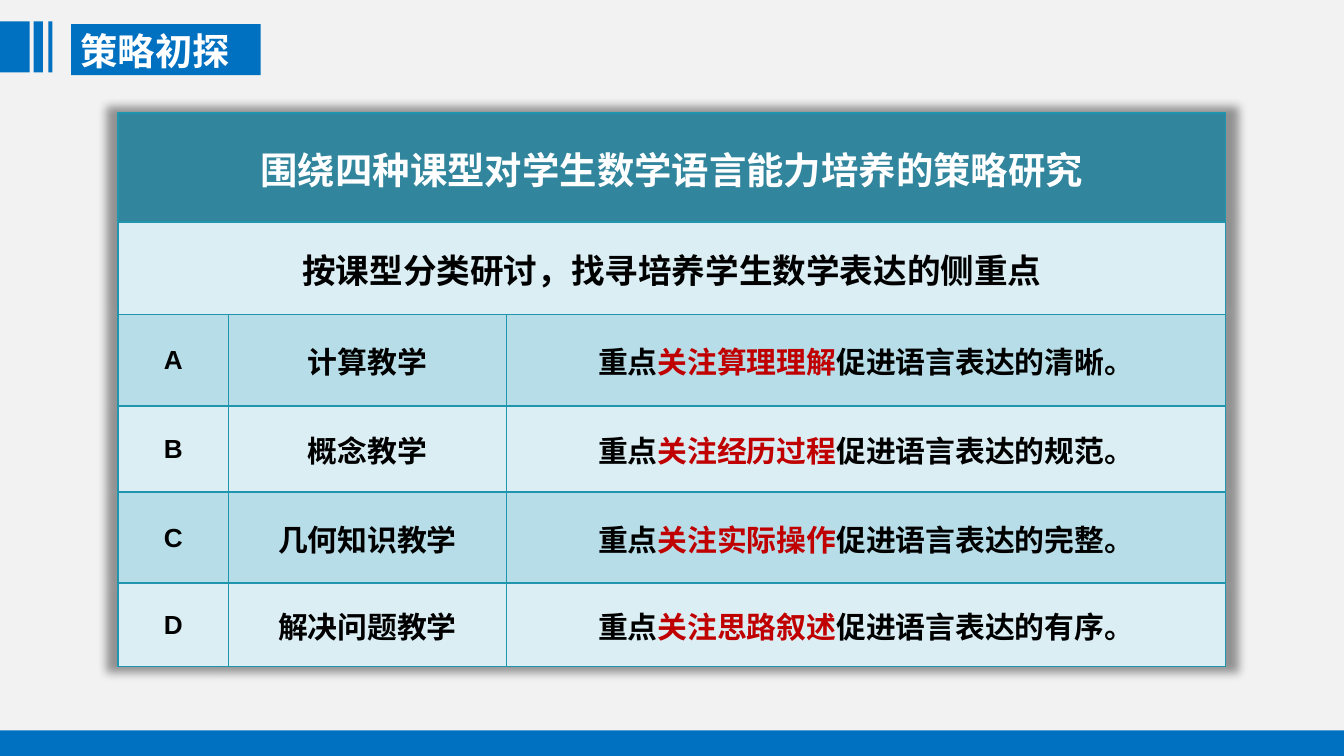
"""Build the slide of teaching strategies for four lesson types."""
from typing import NamedTuple

from lxml import etree
from pptx import Presentation, util as u
from pptx.dml.color import RGBColor
from pptx.enum import shapes, text
from pptx.oxml import ns

BLUE, RED, BLACK, WHITE = "0070C0", "C00000", "000000", "FFFFFF"
HEADER, LIGHT, MID, BORDER = "31859C", "DBEEF4", "B7DEE8", "2095AE"
CJK = "Noto Sans CJK SC"
WIDTH = 10
HEIGHT = WIDTH * 9 / 16
FOOTER = 0.19


class Bar(NamedTuple):
    left: float
    top: float
    width: float
    height: float


class Run(NamedTuple):
    text: str
    size: float
    color: str = BLACK
    font: str = "Arial"


class Lesson(NamedTuple):
    letter: str
    name: str
    focus: str
    result: str


STRIPES = [Bar(left, 0.16, width, 0.38) for left, width in ((0, 0.22), (0.25, 0.07), (0.36, 0.03))]
TITLES = [
    (Run("围绕四种课型对学生数学语言能力培养的策略研究", 20, WHITE), HEADER),
    (Run("按课型分类研讨，找寻培养学生数学表达的侧重点", 18), LIGHT),
]
LESSONS = [
    Lesson("A", "计算教学", "关注算理理解", "清晰"),
    Lesson("B", "概念教学", "关注经历过程", "规范"),
    Lesson("C", "几何知识教学", "关注实际操作", "完整"),
    Lesson("D", "解决问题教学", "关注思路叙述", "有序"),
]
COLS = (0.82, 2.07, 5.35)
ROWS = (0.81, 0.69, 0.68, 0.64, 0.68, 0.62)


def rgb(value: str) -> RGBColor:
    return RGBColor.from_string(value)


def add_xml(parent, tag: str, **attrs: str):
    return etree.SubElement(parent, ns.qn(tag), attrs)


def paint(fill, color: str) -> None:
    fill.solid()
    fill.fore_color.rgb = rgb(color)


def add_bar(s, bar: Bar) -> None:
    sp = s.shapes.add_shape(shapes.MSO_SHAPE.RECTANGLE, *map(u.Inches, bar))
    sp.shadow.inherit = False
    sp.line.fill.background()
    paint(sp.fill, BLUE)


def add_run(p, run: Run) -> None:
    r = p.add_run()
    r.text = run.text
    for key, value in {"size": u.Pt(run.size), "bold": True, "name": run.font}.items():
        setattr(r.font, key, value)
    r.font.color.rgb = rgb(run.color)
    add_xml(r.font._element, "a:ea", typeface=CJK)


def add_heading(s) -> None:
    add_bar(s, Bar(0.53, 0.18, 1.41, 0.38))
    tf = s.shapes.add_textbox(*map(u.Inches, (0.53, 0.17, 1.6, 0.41))).text_frame
    fmt = {"word_wrap": True, "margin_left": u.Inches(0.07), "margin_right": u.Inches(0.07),
           "margin_top": u.Inches(0.04), "margin_bottom": u.Inches(0.04),
           "auto_size": text.MSO_AUTO_SIZE.SHAPE_TO_FIT_TEXT}
    for key, value in fmt.items():
        setattr(tf, key, value)
    add_run(tf.paragraphs[0], Run("策略初探", 20, WHITE, CJK))


def fill_cell(cell, color: str, runs: list[Run]) -> None:
    fmt = {"vertical_anchor": text.MSO_ANCHOR.MIDDLE, "margin_left": u.Inches(0.01),
           "margin_right": u.Inches(0.01), "margin_top": u.Inches(0.01), "margin_bottom": 0}
    for key, value in fmt.items():
        setattr(cell, key, value)
    for side in "LRTB":
        ln = add_xml(cell._tc.get_or_add_tcPr(), f"a:ln{side}", w=str(u.Pt(1)))
        add_xml(add_xml(ln, "a:solidFill"), "a:srgbClr", val=BORDER)
    paint(cell.fill, color)
    p = cell.text_frame.paragraphs[0]
    p.alignment = text.PP_ALIGN.CENTER
    for run in runs:
        add_run(p, run)


def add_shadow(table) -> None:
    effects = etree.Element(ns.qn("a:effectLst"))
    shadow = add_xml(effects, "a:outerShdw", blurRad=str(u.Pt(5)), sx="102000", sy="102000",
                     algn="ctr", rotWithShape="0")
    color = add_xml(shadow, "a:srgbClr", val=BLACK)
    add_xml(color, "a:alpha", val="40000")
    table._tbl.tblPr.insert(0, effects)


def add_strategy_table(s) -> None:
    box = map(u.Inches, (0.88, 0.84, sum(COLS), sum(ROWS)))
    table = s.shapes.add_table(len(ROWS), len(COLS), *box).table
    for col, width in zip(table.columns, COLS):
        col.width = u.Inches(width)
    for row, height in zip(table.rows, ROWS):
        row.height = u.Inches(height)
    for i, (run, color) in enumerate(TITLES):
        table.cell(i, 0).merge(table.cell(i, len(COLS) - 1))
        for j in range(len(COLS)):
            fill_cell(table.cell(i, j), color, [] if j else [run])
    for i, lesson in enumerate(LESSONS, len(TITLES)):
        focus = [Run("重点", 16), Run(lesson.focus, 16, RED),
                 Run(f"促进语言表达的{lesson.result}。", 16)]
        cells = [[Run(lesson.letter, 14)], [Run(lesson.name, 16)], focus]
        for j, runs in enumerate(cells):
            fill_cell(table.cell(i, j), LIGHT if i % 2 else MID, runs)
    add_shadow(table)


def main() -> None:
    prs = Presentation()
    prs.slide_width, prs.slide_height = u.Inches(WIDTH), u.Inches(HEIGHT)
    s = prs.slides.add_slide(prs.slide_layouts[6])
    paint(s.background.fill, "F2F2F2")
    add_heading(s)
    for bar in STRIPES:
        add_bar(s, bar)
    add_bar(s, Bar(0, HEIGHT - FOOTER, WIDTH, FOOTER))
    add_strategy_table(s)
    prs.save("out.pptx")


if __name__ == "__main__":
    main()
